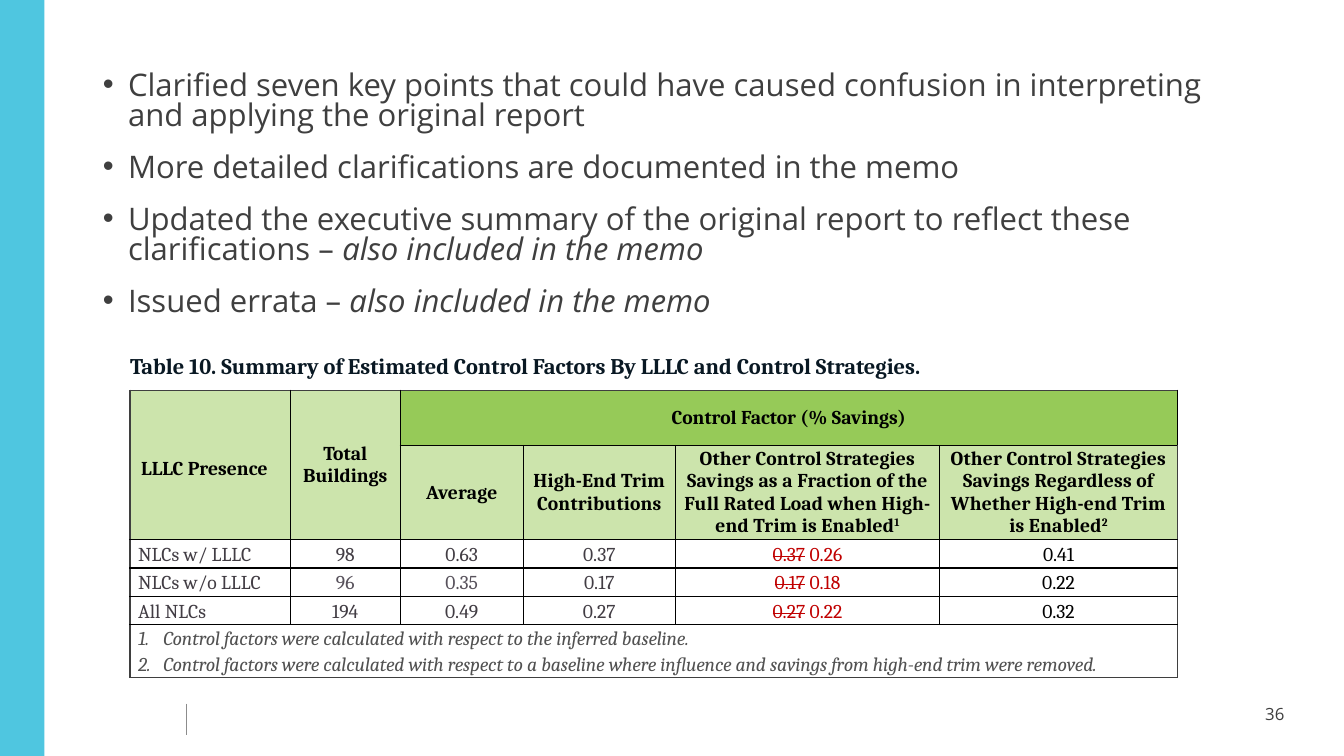
import pptx
import pptx.util
import pptx.dml.color
import pptx.enum.shapes
import pptx.enum.text
import pptx.oxml.ns
import lxml.etree

Inches = pptx.util.Inches
Pt = pptx.util.Pt
RGB = pptx.dml.color.RGBColor
ALIGN = pptx.enum.text.PP_ALIGN
MIDDLE = pptx.enum.text.MSO_ANCHOR.MIDDLE
qn = pptx.oxml.ns.qn

TEAL, RULE_GRAY, DARK = RGB(0x4F, 0xC6, 0xE0), RGB(0x8C, 0x8C, 0x8C), RGB(0x3F, 0x3F, 0x3F)
NAVY, BLACK, RED = RGB(0x09, 0x18, 0x23), RGB(0, 0, 0), RGB(0xC0, 0, 0)
PLUM, MAUVE, NOTE_GRAY = RGB(0x42, 0x3D, 0x44), RGB(0x58, 0x52, 0x5C), RGB(0x51, 0x51, 0x51)
PALE_GREEN, GREEN = RGB(0xCC, 0xE4, 0xAC), RGB(0x96, 0xCA, 0x58)

POINTS = [
    ("Clarified seven key points that could have caused confusion in interpreting "
     "and applying the original report", ""),
    ("More detailed clarifications are documented in the memo", ""),
    ("Updated the executive summary of the original report to reflect these clarifications – ",
     "also included in the memo"),
    ("Issued errata – ", "also included in the memo"),
]
CAPTION = "Table 10. Summary of Estimated Control Factors By LLLC and Control Strategies."
GROUP_HEADINGS = ["LLLC Presence", "Total Buildings", "Control Factor (% Savings)"]
FACTOR_HEADINGS = [
    ("Average", ""),
    ("High-End Trim Contributions", ""),
    ("Other Control Strategies Savings as a Fraction of the Full Rated Load "
     "when High-end Trim is Enabled", "1"),
    ("Other Control Strategies Savings Regardless of Whether High-end Trim is Enabled", "2"),
]
BUILDINGS = [
    ("NLCs w/ LLLC", "98", "0.63", "0.37", ("0.37", " 0.26"), "0.41"),
    ("NLCs w/o LLLC", "96", "0.35", "0.17", ("0.17", " 0.18"), "0.22"),
    ("All NLCs", "194", "0.49", "0.27", ("0.27", " 0.22"), "0.32"),
]
FOOTNOTES = [
    "1.\tControl factors were calculated with respect to the inferred baseline.",
    "2.\tControl factors were calculated with respect to a baseline where influence "
    "and savings from high-end trim were removed.",
]
COLUMNS = [1.59, 1.09, 1.22, 1.51, 2.62, 2.36]
ROWS = [0.43, 0.55, 0.9, 0.28, 0.28, 0.28, 0.5]
LAST_ROW, LAST_COLUMN = len(ROWS) - 1, len(COLUMNS) - 1
HEADING_INSETS, DATA_INSETS = (0.11, 0.06, 0.11, 0.06), (0.08, 0, 0.08, 0)


def add_run(paragraph, text, size, color, font="Cambria", bold=False, italic=False, **extras):
    run = paragraph.add_run()
    run.text = text
    run.font.size, run.font.name = Pt(size), font
    run.font.bold, run.font.italic = bold, italic
    run.font.color.rgb = color
    for name, setting in extras.items():
        run.font._element.set(name, setting)


def hang(paragraph, indent):
    properties = paragraph._p.get_or_add_pPr()
    properties.set("marL", str(Inches(indent)))
    properties.set("indent", str(-Inches(indent)))
    return properties


def set_borders(cell, row, column):
    left = DARK if column == 0 else BLACK
    right = DARK if column == LAST_COLUMN or row == LAST_ROW else BLACK
    top = DARK if row == 1 else BLACK
    bottom = DARK if row in (0, LAST_ROW) else BLACK
    if row == 0:
        left = right = top = None
    properties = cell._tc.get_or_add_tcPr()
    for place, (side, color) in enumerate(zip("LRTB", (left, right, top, bottom))):
        line = lxml.etree.Element(qn("a:ln" + side), w=str(Pt(1)))
        if color is None:
            lxml.etree.SubElement(line, qn("a:noFill"))
        else:
            fill = lxml.etree.SubElement(line, qn("a:solidFill"))
            lxml.etree.SubElement(fill, qn("a:srgbClr"), val=str(color))
        properties.insert(place, line)


def prepare(cell, insets, align, spacing=1.0):
    cell.vertical_anchor = MIDDLE
    cell.margin_left, cell.margin_top, cell.margin_right, cell.margin_bottom = map(Inches, insets)
    paragraph = cell.text_frame.paragraphs[0]
    paragraph.alignment, paragraph.line_spacing = align, spacing
    return paragraph


def add_points(slide):
    body = slide.placeholders[1]
    body.left, body.top, body.width, body.height = map(Inches, (0.92, 0.67, 11.5, 2.89))
    frame = body.text_frame
    frame.auto_size = pptx.enum.text.MSO_AUTO_SIZE.NONE
    for index, (statement, aside) in enumerate(POINTS):
        paragraph = frame.add_paragraph() if index else frame.paragraphs[0]
        properties = hang(paragraph, 0.25)
        lxml.etree.SubElement(properties, qn("a:buFont"), typeface="Arial")
        lxml.etree.SubElement(properties, qn("a:buChar"), char="•")
        paragraph.line_spacing = 0.8
        paragraph.space_before, paragraph.space_after = Pt(10 if index else 0), Pt(6)
        add_run(paragraph, statement, 22.2, DARK, "Open Sans")
        if aside:
            add_run(paragraph, aside, 22.2, DARK, "Open Sans", italic=True)


def add_factor_table(slide):
    frame = slide.shapes.add_table(len(ROWS), len(COLUMNS), Inches(1.29), Inches(3.44),
                                   Inches(sum(COLUMNS)), Inches(sum(ROWS)))
    factors = frame.table
    factors.first_row = factors.horz_banding = False
    for column, width in enumerate(COLUMNS):
        factors.columns[column].width = Inches(width)
    for row, height in enumerate(ROWS):
        factors.rows[row].height = Inches(height)
        for column in range(len(COLUMNS)):
            cell = factors.cell(row, column)
            if row in (1, 2):
                cell.fill.solid()
                cell.fill.fore_color.rgb = GREEN if row == 1 and column > 1 else PALE_GREEN
            else:
                cell.fill.background()
            set_borders(cell, row, column)
    for start, end in [((0, 0), (0, 5)), ((1, 0), (2, 0)), ((1, 1), (2, 1)),
                       ((1, 2), (1, 5)), ((LAST_ROW, 0), (LAST_ROW, 5))]:
        factors.cell(*start).merge(factors.cell(*end))

    caption = prepare(factors.cell(0, 0), (0, 0, 0, 0.03), ALIGN.JUSTIFY)
    add_run(caption, CAPTION, 16, NAVY, bold=True)
    for column, heading in enumerate(GROUP_HEADINGS):
        paragraph = prepare(factors.cell(1, column), HEADING_INSETS,
                            ALIGN.CENTER if column else ALIGN.JUSTIFY, 1.0 if column else 1.35)
        add_run(paragraph, heading, 14, BLACK, bold=True)
    for column, (heading, mark) in enumerate(FACTOR_HEADINGS, 2):
        paragraph = prepare(factors.cell(2, column), DATA_INSETS, ALIGN.CENTER)
        add_run(paragraph, heading, 14, BLACK, bold=True, spc="10")
        if mark:
            add_run(paragraph, mark, 14, BLACK, bold=True, baseline="30000")
    for row, building in enumerate(BUILDINGS, 3):
        for column, entry in enumerate(building):
            paragraph = prepare(factors.cell(row, column), DATA_INSETS,
                                ALIGN.CENTER if column else ALIGN.JUSTIFY, 1.12)
            if column == 4:
                old, new = entry
                add_run(paragraph, old, 14, RED, strike="sngStrike")
                add_run(paragraph, new, 14, RED)
            else:
                muted = row == 4 and column in (1, 2)
                color = BLACK if column == LAST_COLUMN else MAUVE if muted else PLUM
                add_run(paragraph, entry, 14, color)
    notes = factors.cell(LAST_ROW, 0)
    paragraph = prepare(notes, DATA_INSETS, ALIGN.JUSTIFY, 1.12)
    for index, footnote in enumerate(FOOTNOTES):
        if index:
            paragraph = notes.text_frame.add_paragraph()
            paragraph.alignment, paragraph.line_spacing = ALIGN.JUSTIFY, 1.12
        hang(paragraph, 0.25)
        add_run(paragraph, footnote, 14, NOTE_GRAY, italic=True, spc="-10")


def main():
    deck = pptx.Presentation()
    deck.slide_width, deck.slide_height = Inches(13.33), Inches(7.5)
    slide = deck.slides.add_slide(deck.slide_layouts[1])
    title = slide.shapes.title._element
    title.getparent().remove(title)

    band = slide.shapes.add_shape(pptx.enum.shapes.MSO_SHAPE.RECTANGLE,
                                  0, 0, Inches(0.44), deck.slide_height)
    band.shadow.inherit = False
    band.fill.solid()
    band.fill.fore_color.rgb = TEAL
    band.line.fill.background()

    rule = slide.shapes.add_connector(pptx.enum.shapes.MSO_CONNECTOR.STRAIGHT,
                                      *map(Inches, (1.85, 6.98, 1.85, 7.29)))
    rule.line.color.rgb, rule.line.width = RULE_GRAY, Pt(1)
    lxml.etree.SubElement(rule._element.spPr, qn("a:effectLst"))

    add_points(slide)
    page = slide.shapes.add_textbox(*map(Inches, (12.45, 6.93, 0.56, 0.4)))
    page.text_frame.word_wrap = True
    add_run(page.text_frame.paragraphs[0], "36", 12, DARK, "Open Sans")
    add_factor_table(slide)
    deck.save("out.pptx")


if __name__ == "__main__":
    main()
